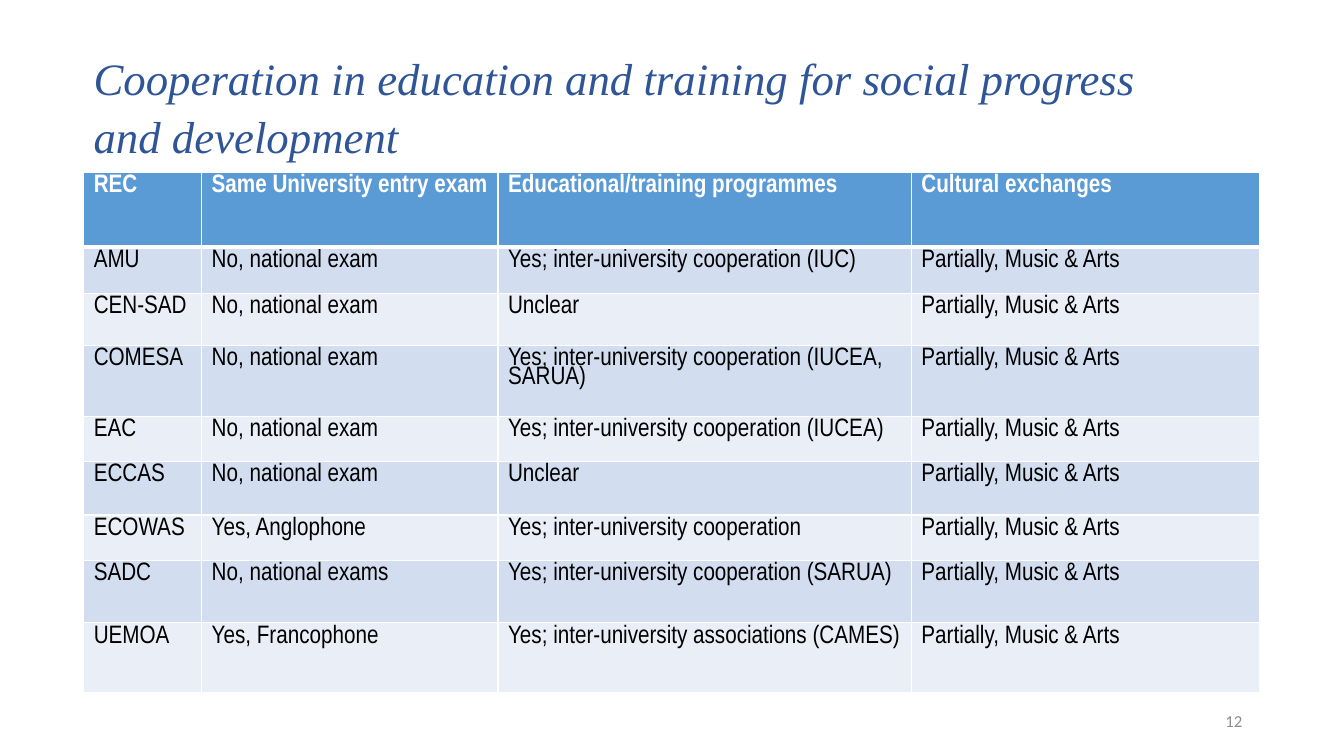
from pptx import Presentation
from pptx.dml.color import RGBColor
from pptx.enum.text import MSO_ANCHOR as Anchor, PP_ALIGN as Align
from pptx.oxml import parse_xml
from pptx.oxml.ns import nsdecls
from pptx.util import Inches, Pt

HEADER = ["REC", "Same University entry exam", "Educational/training programmes", "Cultural exchanges"]
EXCHANGES = "Partially, Music & Arts"
COMMUNITIES = [
    ("AMU", "No, national exam", "Yes; inter-university cooperation (IUC)"),
    ("CEN-SAD", "No, national exam", "Unclear"),
    ("COMESA", "No, national exam", "Yes; inter-university cooperation (IUCEA, SARUA)"),
    ("EAC", "No, national exam", "Yes; inter-university cooperation (IUCEA)"),
    ("ECCAS", "No, national exam", "Unclear"),
    ("ECOWAS", "Yes, Anglophone", "Yes; inter-university cooperation"),
    ("SADC", "No, national exams", "Yes; inter-university cooperation (SARUA)"),
    ("UEMOA", "Yes, Francophone", "Yes; inter-university associations (CAMES)"),
]
COLUMN_WIDTHS = [1.17, 2.94, 4.1, 3.45]
ROW_HEIGHTS = [0.74, 0.46, 0.52, 0.7, 0.45, 0.53, 0.45, 0.62, 0.69]
LEFT = 0.83


def color(hex_code):
    return RGBColor.from_string(hex_code)


def write(frame, text, font, size, ink, bold=False, italic=False, align=Align.LEFT, spacing=1.0):
    frame.word_wrap = True
    para = frame.paragraphs[0]
    para.alignment = align
    para.line_spacing = spacing
    span = para.add_run()
    span.text = text
    span.font.name = font
    span.font.size = Pt(size)
    span.font.bold = bold
    span.font.italic = italic
    span.font.color.rgb = color(ink)


deck = Presentation()
deck.slide_width, deck.slide_height = Inches(13.33), Inches(7.5)
page = deck.slides.add_slide(deck.slide_layouts[6])

rows = [HEADER] + [[*community, EXCHANGES] for community in COMMUNITIES]
table = page.shapes.add_table(
    len(rows), len(HEADER), Inches(LEFT), Inches(1.71),
    Inches(sum(COLUMN_WIDTHS)), Inches(sum(ROW_HEIGHTS)),
).table
for column, width in zip(table.columns, COLUMN_WIDTHS):
    column.width = Inches(width)
for row, height in zip(table.rows, ROW_HEIGHTS):
    row.height = Inches(height)

for row_index, texts in enumerate(rows):
    is_header = row_index == 0
    band = "5B9BD5" if is_header else ("EAEFF7", "D2DEEF")[row_index % 2]
    edge_widths = {"L": 1, "R": 1, "T": 3 if row_index == 1 else 1, "B": 3 if is_header else 1}
    for column_index, text in enumerate(texts):
        cell = table.cell(row_index, column_index)
        write(cell.text_frame, text, "Arial Narrow", 18,
              "FFFFFF" if is_header else "000000", bold=is_header, spacing=0.8)
        properties = cell._tc.get_or_add_tcPr()
        for side, width in edge_widths.items():
            properties.append(parse_xml(
                f'<a:ln{side} {nsdecls("a")} w="{Pt(width)}"><a:solidFill>'
                f'<a:srgbClr val="FFFFFF"/></a:solidFill></a:ln{side}>'))
        cell.fill.solid()
        cell.fill.fore_color.rgb = color(band)

title = page.shapes.add_textbox(Inches(LEFT), Inches(0.42), Inches(11.06), Inches(0.64))
write(title.text_frame, "Cooperation in education and training for social progress and development",
      "Times New Roman", 32, "2F5597", italic=True, spacing=1.07)

number = page.shapes.add_textbox(Inches(9.42), Inches(6.95), Inches(3), Inches(0.4))
number.text_frame.vertical_anchor = Anchor.MIDDLE
write(number.text_frame, "12", "Calibri", 12, "8C8C8C", align=Align.RIGHT)

deck.save("out.pptx")
